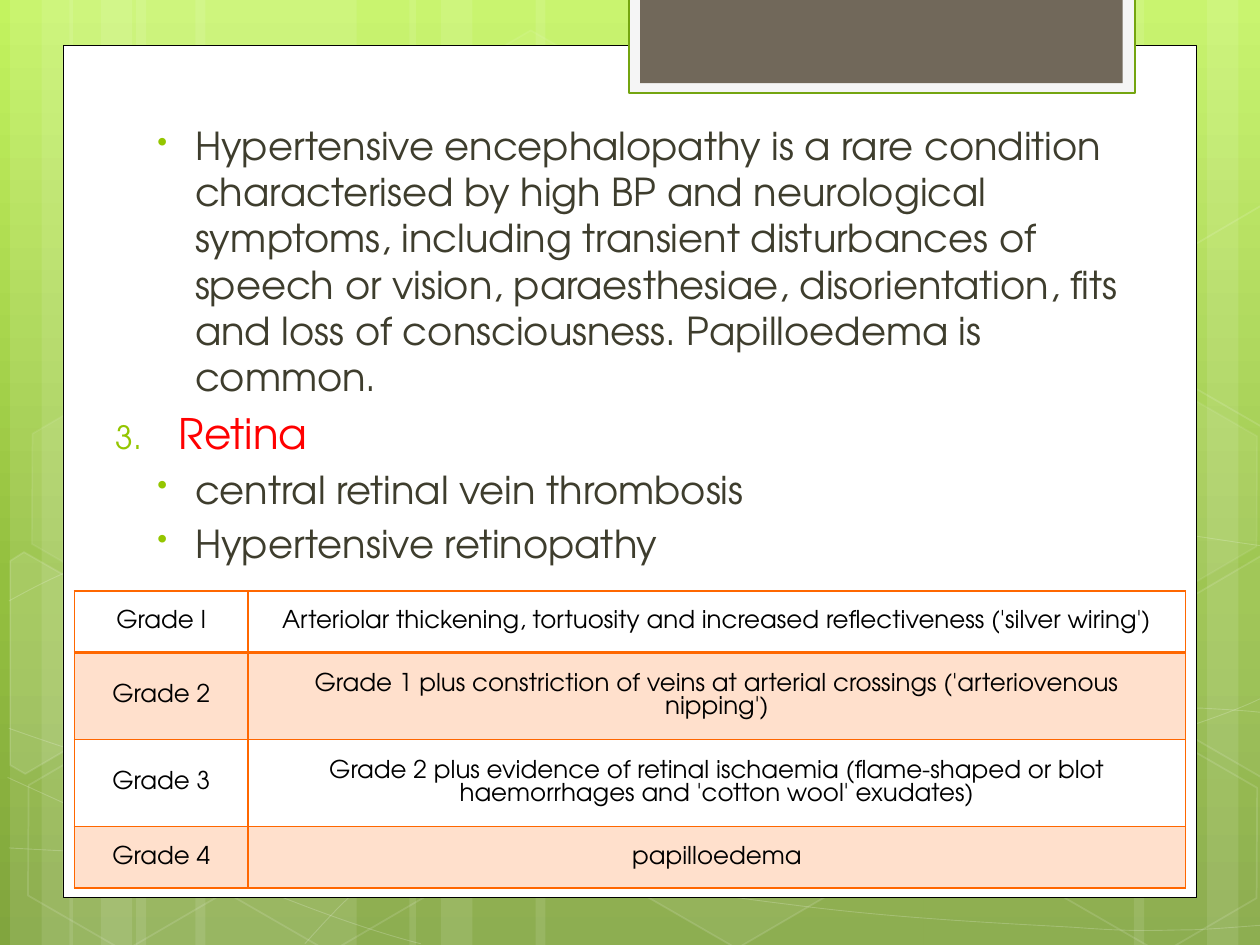
import math

import pptx
import pptx.dml.color
import pptx.enum.shapes
import pptx.enum.text
import pptx.oxml
import pptx.oxml.ns
import pptx.util
from pptx.util import Inches

qn = pptx.oxml.ns.qn
element = pptx.oxml.parse_xml
NS = pptx.oxml.ns.nsdecls("a")
SHAPES = pptx.enum.shapes.MSO_SHAPE
FONT = "TeX Gyre Adventor"
WHITE, GREEN, ORANGE, TEXT, RED = "FFFFFF", "94C600", "FF6700", "3E3D2D", "FF0000"
TILT = 30

STRIPES = [(1.08, 1.75), (0.08, 0.5), (0.33, 0.83), (1.55, 1.75), (0.55, 0.5), (0.8, 0.83),
           (7.33, 1.75), (9.58, 0.5), (9, 0.83), (4.25, 3.08), (3.25, 0.5), (3.5, 0.83)]

# Each curve is a start point followed by Bezier segments of three points.
CURVES = [
    [(0.07, 6.73), (0.61, 6.76), (1.15, 6.79), (1.9, 6.78), (2.65, 6.77), (3.58, 6.75),
     (4.58, 6.65), (5.58, 6.55), (7, 6.36), (7.92, 6.17), (8.83, 5.98), (9.77, 5.68),
     (10.07, 5.51)],
    [(0.07, 4.77), (0.36, 4.61), (0.65, 4.46), (1.21, 4.31), (1.78, 4.16), (2.59, 3.94),
     (3.47, 3.87), (4.36, 3.8), (5.44, 3.79), (6.54, 3.87), (7.64, 3.95), (9.47, 4.26),
     (10.07, 4.34)],
    [(0.06, 6.17), (1.27, 6.72), (2.47, 7.27), (3.34, 7.49)],
    [(0.07, 5.78), (0.38, 5.89), (0.7, 6), (1.28, 6.16), (1.86, 6.31), (2.73, 6.56),
     (3.57, 6.73), (4.4, 6.9), (5.45, 7.08), (6.28, 7.18), (7.11, 7.29), (8, 7.33),
     (8.53, 7.36), (9.05, 7.4), (9.19, 7.38), (9.45, 7.38), (9.71, 7.37), (9.89, 7.35),
     (10.07, 7.34)],
    [(2.42, 7.49), (2.6, 7.29), (2.78, 7.09), (3.02, 6.91), (3.26, 6.73), (3.6, 6.53),
     (3.88, 6.39), (4.16, 6.25), (4.33, 6.19), (4.7, 6.09), (5.06, 5.99), (5.73, 5.85),
     (6.08, 5.78), (6.44, 5.71), (6.49, 5.71), (6.8, 5.69), (7.11, 5.66), (7.6, 5.63),
     (7.94, 5.62), (8.29, 5.61), (8.86, 5.62), (8.86, 5.62), (9.08, 5.62), (9.31, 5.62),
     (9.53, 5.62), (9.71, 5.63), (9.88, 5.64), (9.97, 5.65), (10.06, 5.66), (10.03, 5.65),
     (10.06, 5.66)],
]

# left, top, fill opacity (None is no fill), line opacity
HEXAGONS = [(3.34, 0.36, 4, 8), (4.97, 5.89, 6, 12), (0.11, 5.91, None, 12),
            (0.14, 3.12, 7, 8), (1.74, 5.92, None, 12), (7.53, 4.53, 10, 12),
            (8.34, 5.93, None, 12), (8.34, 3.14, 7, 8)]

# centre, points as they stand after tilting, fill opacity
CUT_HEXAGONS = [
    ((0.36, 5.35), [(0.08, 4.45), (0.19, 4.38), (0.96, 4.82), (0.95, 5.7), (0.2, 6.14),
                    (0.08, 6.07)], 10),
    ((9.85, 5.2), [(9.26, 4.85), (10.01, 4.41), (10.09, 4.46), (10.09, 6.13),
                   (10.02, 6.17), (9.26, 5.73)], 4),
    ((9.85, 2.41), [(9.26, 2.07), (10.01, 1.63), (10.1, 1.68), (10.09, 3.35),
                    (10.02, 3.39), (9.26, 2.95)], None),
]

BODY = [
    ("•", "Hypertensive encephalopathy is a rare condition characterised by high BP and "
          "neurological symptoms, including transient disturbances of speech or vision, "
          "paraesthesiae, disorientation, fits and loss of consciousness. Papilloedema is "
          "common."),
    (3, "Retina"),
    ("•", "central retinal vein thrombosis"),
    ("•", "Hypertensive retinopathy"),
]

GRADES = [
    ("Grade I", "Arteriolar thickening, tortuosity and increased reflectiveness "
                "('silver wiring')"),
    ("Grade 2", "Grade 1 plus constriction of veins at arterial crossings "
                "('arteriovenous nipping')"),
    ("Grade 3", "Grade 2 plus evidence of retinal ischaemia (flame-shaped or blot "
                "haemorrhages and 'cotton wool' exudates)"),
    ("Grade 4", "papilloedema"),
]


def rgb(value):
    return pptx.dml.color.RGBColor.from_string(value)


def set_opacity(parent, percent):
    """Set the opacity of the solid fill held directly by an XML element."""
    clr = parent.find(qn("a:solidFill")).find(qn("a:srgbClr"))
    clr.append(element(f'<a:alpha {NS} val="{percent * 1000}"/>'))


def untilt(points, centre):
    """Turn points back by TILT degrees about the centre."""
    cx, cy = centre
    cos, sin = math.cos(math.radians(TILT)), math.sin(math.radians(TILT))
    return [(cx + (x - cx) * cos + (y - cy) * sin, cy - (x - cx) * sin + (y - cy) * cos)
            for x, y in points]


def bend(sp):
    """Turn each three line segments of a freeform into one Bezier segment."""
    lines = list(sp.element.iter(qn("a:lnTo")))
    for i in range(0, len(lines), 3):
        curve = element(f"<a:cubicBezTo {NS}/>")
        lines[i].addprevious(curve)
        for line in lines[i:i + 3]:
            curve.append(line[0])
            line.getparent().remove(line)


class Builder:
    """Holds the current slide and its text font."""

    def __init__(self, s, font):
        self.s, self.font = s, font

    def background(self, stops):
        gs = "".join(f'<a:gs pos="{pos * 1000}"><a:srgbClr val="{c}"/></a:gs>'
                     for pos, c in stops)
        self.s.background.fill.solid()
        solid = next(self.s.element.iter(qn("a:solidFill")))
        solid.getparent().replace(solid, element(
            f'<a:gradFill {NS} rotWithShape="1"><a:gsLst>{gs}</a:gsLst>'
            '<a:lin ang="5400000" scaled="0"/></a:gradFill>'))

    def paint(self, sp, fill=None, opacity=None, line=None, width=1, line_opacity=None):
        sp.shadow.inherit = False
        if fill:
            sp.fill.solid()
            sp.fill.fore_color.rgb = rgb(fill)
            if opacity:
                set_opacity(sp.element.spPr, opacity)
        else:
            sp.fill.background()
        if line:
            sp.line.color.rgb = rgb(line)
            sp.line.width = pptx.util.Pt(width)
            if line_opacity:
                set_opacity(sp.element.spPr.find(qn("a:ln")), line_opacity)
        else:
            sp.line.fill.background()

    def shape(self, kind, x, y, w, h, **style):
        sp = self.s.shapes.add_shape(kind, Inches(x), Inches(y), Inches(w), Inches(h))
        self.paint(sp, **style)
        return sp

    def outline(self, points, close, **style):
        pts = [(Inches(x), Inches(y)) for x, y in points]
        fb = self.s.shapes.build_freeform(*pts[0])
        fb.add_line_segments(pts[1:], close=close)
        sp = fb.convert_to_shape()
        self.paint(sp, **style)
        return sp

    def format_run(self, p, size, color):
        f = p.runs[0].font
        f.name, f.size, f.color.rgb = self.font, pptx.util.Pt(size), rgb(color)

    def body(self, x, y, w, h, items):
        tf = self.s.shapes.add_textbox(Inches(x), Inches(y), Inches(w), Inches(h)).text_frame
        tf.word_wrap = True
        for i, (mark, text) in enumerate(items):
            numbered = mark != "•"
            size, color = (24, RED) if numbered else (22, TEXT)
            left, hang = (0.57, 0.5) if numbered else (0.7, 0.3)
            p = tf.paragraphs[0] if i == 0 else tf.add_paragraph()
            p.text = text
            pPr = p._p.get_or_add_pPr()
            pPr.set("marL", str(Inches(left)))
            pPr.set("indent", str(-Inches(hang)))
            bullet = (f'<a:buAutoNum {NS} type="arabicPeriod" startAt="{mark}"/>' if numbered
                      else f'<a:buChar {NS} char="{mark}"/>')
            for xml in (f'<a:buClr {NS}><a:srgbClr val="{GREEN}"/></a:buClr>',
                        f'<a:buSzPct {NS} val="76000"/>', bullet):
                pPr.append(element(xml))
            if i:
                p.space_before = pptx.util.Pt(size * 0.2)
            self.format_run(p, size, color)

    def table(self, x, y, cols, rows, data):
        tbl = self.s.shapes.add_table(len(rows), len(cols), Inches(x), Inches(y),
                                      Inches(sum(cols)), Inches(sum(rows))).table
        tbl.first_row = tbl.horz_banding = False
        for col, w in zip(tbl.columns, cols):
            col.width = Inches(w)
        for i, (h, texts) in enumerate(zip(rows, data)):
            tbl.rows[i].height = Inches(h)
            for j, text in enumerate(texts):
                self.cell(tbl.cell(i, j), text, i)

    def cell(self, cell, text, row):
        cell.text = text
        cell.vertical_anchor = pptx.enum.text.MSO_ANCHOR.MIDDLE
        p = cell.text_frame.paragraphs[0]
        p.alignment = pptx.enum.text.PP_ALIGN.CENTER
        self.format_run(p, 14, "000000")
        tcPr = cell._tc.get_or_add_tcPr()
        for side in "LRTB":
            width = 2 if (row, side) in ((0, "B"), (1, "T")) else 1
            tcPr.append(element(
                f'<a:ln{side} {NS} w="{pptx.util.Pt(width)}"><a:solidFill>'
                f'<a:srgbClr val="{ORANGE}"/></a:solidFill></a:ln{side}>'))
        if row % 2:
            cell.fill.solid()
            cell.fill.fore_color.rgb = rgb(ORANGE)
            set_opacity(tcPr, 20)
        else:
            cell.fill.background()


def main():
    prs = pptx.Presentation()
    prs.slide_width, prs.slide_height = Inches(10), Inches(7.5)
    b = Builder(prs.slides.add_slide(prs.slide_layouts[6]), FONT)
    b.background([(0, "C3F35F"), (62, "93BF3F"), (100, "81A53E")])
    for x, w in STRIPES:
        b.shape(SHAPES.RECTANGLE, x, 0, w, 7.5, fill=WHITE, opacity=10)
    for points in CURVES:
        bend(b.outline(points, False, line=WHITE, width=0.5, line_opacity=20))
    for x, y, opacity, line_opacity in HEXAGONS:
        sp = b.shape(SHAPES.HEXAGON, x, y, 1.75, 1.52, fill=opacity and WHITE,
                     opacity=opacity, line=WHITE, line_opacity=line_opacity)
        sp.adjustments[0] = 0.285
        sp.rotation = TILT
    for centre, points, opacity in CUT_HEXAGONS:
        sp = b.outline(untilt(points, centre), True, fill=opacity and WHITE,
                       opacity=opacity, line=WHITE, line_opacity=12)
        sp.rotation = TILT
    b.shape(SHAPES.RECTANGLE, 0.5, 0.36, 9, 6.76, fill=WHITE, line="000000", width=0.5)
    b.shape(SHAPES.RECTANGLE, 4.99, -0.02, 4.02, 0.76, fill="F5F5F5", line="74A510", width=1.25)
    b.shape(SHAPES.RECTANGLE, 5.08, -0.02, 3.83, 0.68, fill="71685A")
    b.body(0.75, 0.92, 8.5, 6.06, BODY)
    b.table(0.59, 4.69, [1.38, 7.44], [0.49, 0.69, 0.69, 0.49], GRADES)
    prs.save("out.pptx")


if __name__ == "__main__":
    main()
